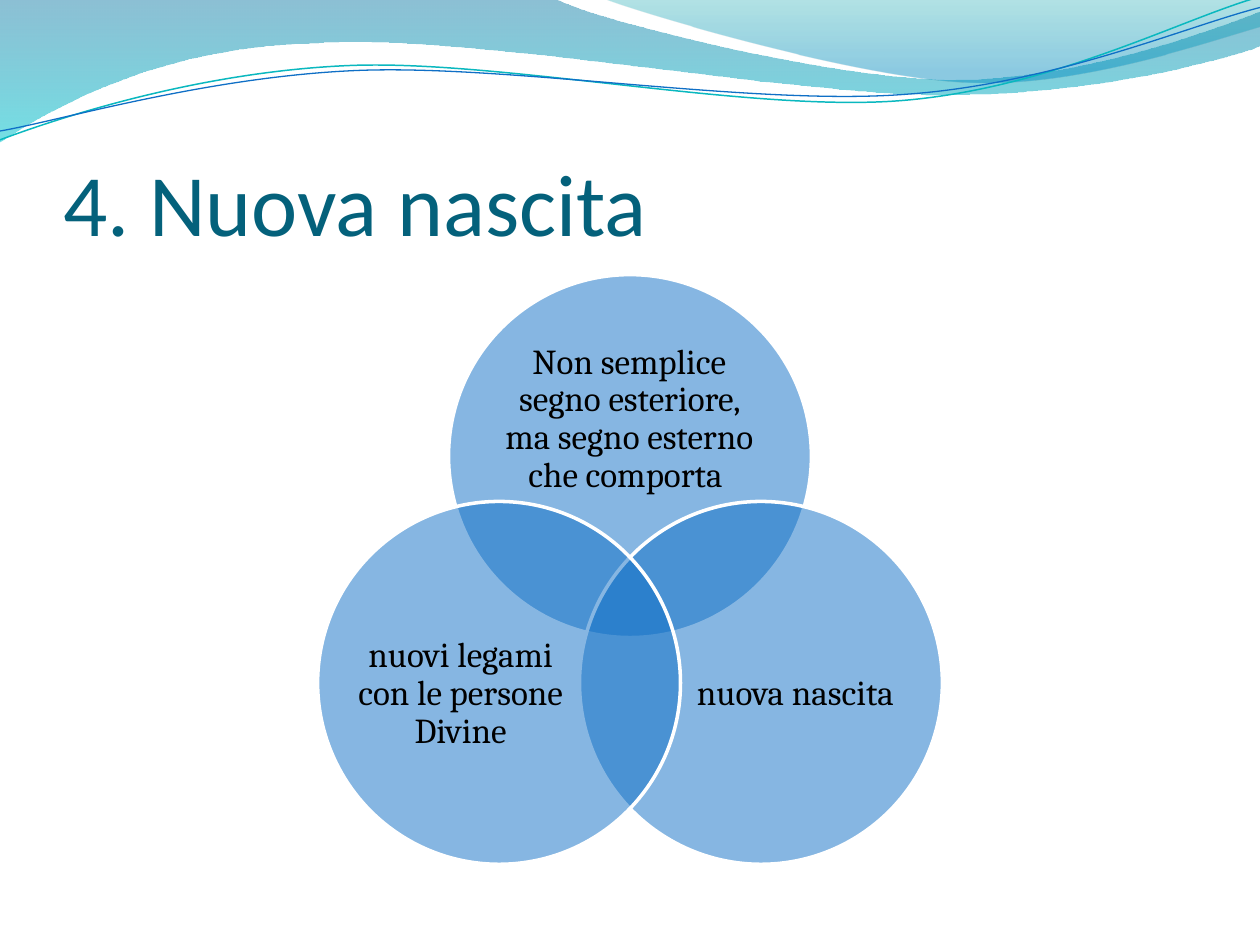
from dataclasses import dataclass
from math import cos, radians, sin

from lxml.etree import SubElement
from pptx import Presentation
from pptx.dml.color import RGBColor
from pptx.enum.shapes import MSO_SHAPE as Preset
from pptx.enum.text import MSO_ANCHOR as Anchor, MSO_AUTO_SIZE as AutoSize, PP_ALIGN as Align
from pptx.oxml.ns import qn
from pptx.util import Inches, Pt

WIDTH, HEIGHT = 10, 7.5
TILT = -2.7


@dataclass(frozen=True)
class Theme:
    title_font: str = "Calibri"
    body_font: str = "Cambria"
    title_size: float = 50
    body_size: float = 20
    title: str = "04617B"
    body: str = "000000"
    circle: str = "0F6FC6"
    circle_opacity: int = 50
    outline: str = "FFFFFF"
    teal_line: str = "0AB8BF"
    blue_line: str = "0F6FC6"


@dataclass(frozen=True)
class Stop:
    position: float
    color: str
    opacity: int


@dataclass(frozen=True)
class Band:
    """Filled outline: segments of one point (straight) or three (cubic curve)."""
    start: tuple
    segments: tuple
    stops: tuple


@dataclass(frozen=True)
class Strand:
    """Open curve in a frame that is tilted around its center."""
    start: tuple
    segments: tuple
    center: tuple
    color: str
    weight: float


@dataclass(frozen=True)
class Circle:
    """Angle on the ring, and the label box measured from the circle's corner."""
    angle: float
    text: str
    label: tuple


THEME = Theme()
RING_CENTER, RING_RADIUS, DIAMETER = (5, 4.82), 1.2, 2.88

BANDS = (
    Band((0, 0), (
        ((4.4, -0.01),),
        ((4.76, 0.17), (6.64, 0.63), (7.58, 0.63)),
        ((8.53, 0.63), (9.58, 0.26), (10, 0.09)),
        ((10.01, 0.36),),
        ((9.83, 0.44), (8.7, 0.76), (7.46, 0.75)),
        ((6.22, 0.75), (3.82, 0.28), (2.57, 0.34)),
        ((1.29, 0.36), (0.46, 0.83), (-0.01, 1.13)),
        ((0, 0),),
    ), (Stop(0, "0074A1", 45), Stop(1, "00C6CF", 55))),
    Band((4.79, -0.01), (
        ((5.09, 0.11), (6.82, 0.62), (7.69, 0.65)),
        ((8.56, 0.69), (9.61, 0.32), (10, 0.21)),
        ((10, 0),),
        ((4.79, -0.01),),
    ), (Stop(0, "00A1A9", 30), Stop(0.8, "008BBF", 45))),
)

STRANDS = (
    Strand((0, 1.11), (
        ((0.48, 0.93), (1.58, 0.57), (2.77, 0.52)),
        ((3.95, 0.47), (5.93, 0.89), (7.13, 0.8)),
        ((8.33, 0.71), (9.38, 0.15), (9.98, -0.02)),
    ), (4.99, 0.58), THEME.teal_line, 0.85),
    Strand((0, 1.04), (
        ((0.47, 0.96), (1.64, 0.61), (2.83, 0.56)),
        ((4.03, 0.51), (5.97, 0.84), (7.17, 0.75)),
        ((8.36, 0.67), (9.41, 0.21), (10, 0.06)),
    ), (5, 0.59), THEME.blue_line, 0.75),
)

CIRCLES = (
    Circle(-90, "Non semplice segno esteriore, ma segno esterno che comporta ",
           (0.38, 0.5, 2.11, 1.3)),
    Circle(30, "nuova nascita ", (0.88, 0.74, 1.73, 1.58)),
    Circle(150, "nuovi legami con le persone Divine", (0.27, 0.74, 1.73, 1.58)),
)


def rgb(color: str) -> RGBColor:
    return RGBColor.from_string(color)


def set_opacity(shape, opacities) -> None:
    """Apply opacities in percent to the shape's fill colours, in order."""
    colors = list(shape.element.spPr.iter(qn("a:srgbClr")))
    for color, opacity in zip(colors, opacities):
        SubElement(color, qn("a:alpha"), val=str(opacity * 1000))


def turn(point: tuple, center: tuple, degrees: float) -> tuple:
    x, y = point[0] - center[0], point[1] - center[1]
    c, s = cos(radians(degrees)), sin(radians(degrees))
    return center[0] + x * c - y * s, center[1] + x * s + y * c


def add_curve(page, start: tuple, segments, close: bool):
    """Build the outline through all points, then join triples into cubic curves."""
    points = [tuple(map(Inches, point)) for segment in segments for point in segment]
    builder = page.shapes.build_freeform(*map(Inches, start))
    builder.add_line_segments(points, close=close)
    shape = builder.convert_to_shape()
    shape.shadow.inherit = False
    steps = iter(list(shape.element.iter(qn("a:lnTo"))))
    for segment in segments:
        first, *others = [next(steps) for _ in segment]
        if others:
            first.tag = qn("a:cubicBezTo")
            for other in others:
                first.append(other[0])
                other.getparent().remove(other)
    return shape


def draw_band(page, band: Band) -> None:
    shape = add_curve(page, band.start, band.segments, close=True)
    shape.fill.gradient()
    shape.fill.gradient_angle = 270
    for target, stop in zip(shape.fill.gradient_stops, band.stops):
        target.position = stop.position
        target.color.rgb = rgb(stop.color)
    set_opacity(shape, [stop.opacity for stop in band.stops])
    shape.line.fill.background()


def draw_strand(page, strand: Strand) -> None:
    start = turn(strand.start, strand.center, -TILT)
    segments = [[turn(point, strand.center, -TILT) for point in segment]
                for segment in strand.segments]
    shape = add_curve(page, start, segments, close=False)
    shape.rotation = TILT
    shape.fill.background()
    shape.line.color.rgb = rgb(strand.color)
    shape.line.width = Pt(strand.weight)


def write_text(box, text: str, font: dict, color: str, frame_format: dict, para_format: dict) -> None:
    frame = box.text_frame
    frame.text = text
    para = frame.paragraphs[0]
    span = para.runs[0]
    frame_values = {"word_wrap": True, "auto_size": AutoSize.NONE, "margin_left": 0,
                    "margin_right": 0, "margin_top": 0, "margin_bottom": 0, **frame_format}
    for target, values in ((frame, frame_values), (para, para_format), (span.font, font)):
        for name, value in values.items():
            setattr(target, name, value)
    span.font.color.rgb = rgb(color)


def draw_title(page, text: str) -> None:
    title = page.shapes.title
    place = {"left": 0.05 * WIDTH, "top": 0.77, "width": 0.9 * WIDTH, "height": HEIGHT / 6}
    for name, value in place.items():
        setattr(title, name, Inches(value))
    write_text(title, text, {"name": THEME.title_font, "size": Pt(THEME.title_size)}, THEME.title,
               {"vertical_anchor": Anchor.BOTTOM, "margin_top": Inches(0.05)},
               {"alignment": Align.LEFT})


def draw_circle(page, circle: Circle) -> None:
    angle = radians(circle.angle)
    left = RING_CENTER[0] + RING_RADIUS * cos(angle) - DIAMETER / 2
    top = RING_CENTER[1] + RING_RADIUS * sin(angle) - DIAMETER / 2
    shape = page.shapes.add_shape(Preset.OVAL, *map(Inches, (left, top, DIAMETER, DIAMETER)))
    shape.shadow.inherit = False
    shape.fill.solid()
    shape.fill.fore_color.rgb = rgb(THEME.circle)
    set_opacity(shape, [THEME.circle_opacity])
    shape.line.color.rgb = rgb(THEME.outline)
    shape.line.width = Pt(2)

    x, y, width, height = circle.label
    box = page.shapes.add_textbox(*map(Inches, (left + x, top + y, width, height)))
    write_text(box, circle.text, {"name": THEME.body_font, "size": Pt(THEME.body_size)}, THEME.body,
               {"vertical_anchor": Anchor.MIDDLE},
               {"alignment": Align.CENTER, "line_spacing": 0.9})


def main() -> None:
    deck = Presentation()
    deck.slide_width, deck.slide_height = Inches(WIDTH), Inches(HEIGHT)
    page = deck.slides.add_slide(deck.slide_layouts[5])
    for band in BANDS:
        draw_band(page, band)
    for strand in STRANDS:
        draw_strand(page, strand)
    draw_title(page, "4. Nuova nascita")
    for circle in CIRCLES:
        draw_circle(page, circle)
    deck.save("out.pptx")


if __name__ == "__main__":
    main()
